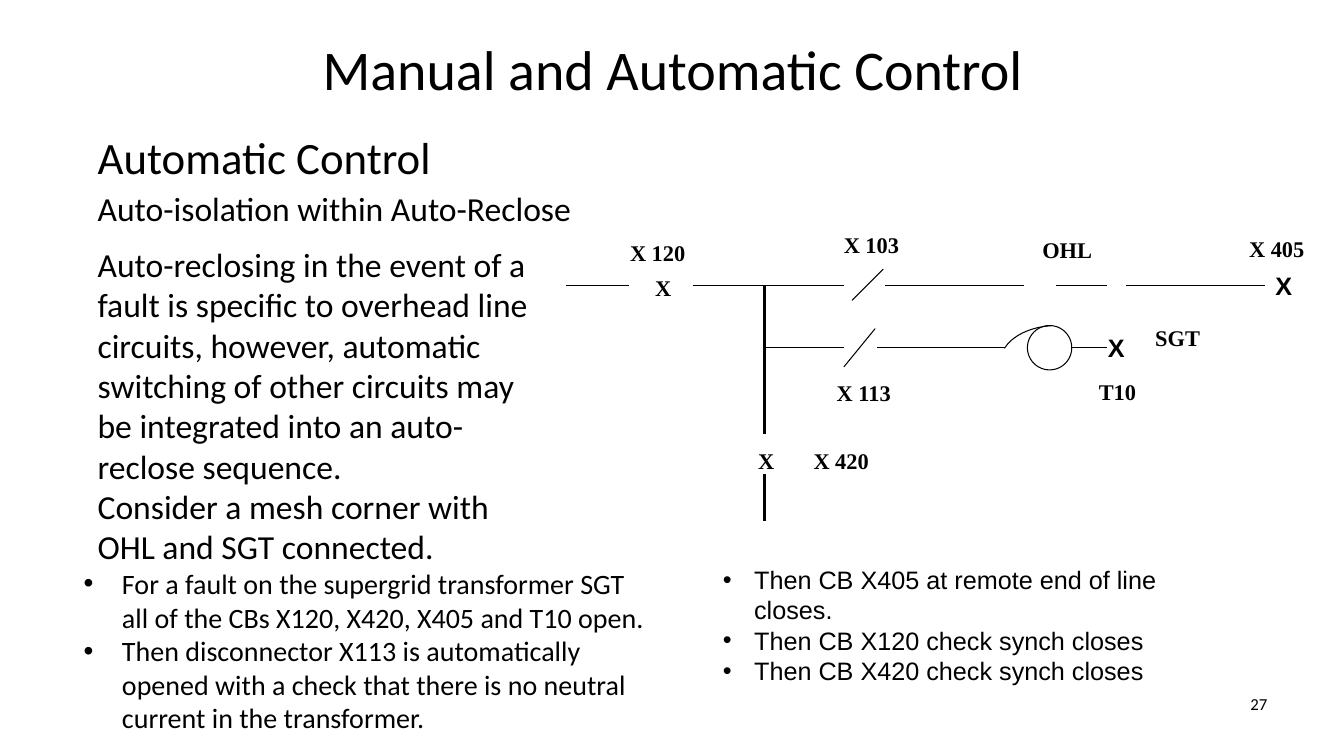
import dataclasses

import pptx
import pptx.dml.color
import pptx.enum.shapes
import pptx.enum.text
import pptx.oxml
import pptx.oxml.ns
import pptx.util
from pptx.util import Inches, Pt


@dataclasses.dataclass(frozen=True)
class Theme:
    ink: pptx.dml.color.RGBColor = pptx.dml.color.RGBColor(0, 0, 0)
    body_font: str = "Calibri"
    label_font: str = "Times New Roman"
    plain_font: str = "Arial"
    title: int = 40
    heading: int = 32
    text: int = 24
    step: int = 20
    remote_step: int = 18
    breaker: int = 18
    label: int = 16
    page: int = 12
    hairline: float = 0
    fine: float = 0.5
    wire: float = 0.75


THEME = Theme()
ALIGN = pptx.enum.text.PP_ALIGN


def place(shape, box):
    shape.left, shape.top, shape.width, shape.height = map(Inches, box)


def write(shape, lines, size, font, bold=False, align=ALIGN.LEFT, hang=None):
    """Fill a shape with paragraphs, bulleted when hang is given."""
    frame = shape.text_frame
    frame.text = "\n".join(lines)
    frame.word_wrap = True
    frame.auto_size = pptx.enum.text.MSO_AUTO_SIZE.NONE
    for paragraph in frame.paragraphs:
        if hang:
            properties = paragraph._p.get_or_add_pPr()
            properties.set("marL", str(Inches(hang)))
            properties.set("indent", str(-Inches(hang)))
            bullet = pptx.oxml.parse_xml(
                f'<a:buChar {pptx.oxml.ns.nsdecls("a")} char="•"/>')
            properties.append(bullet)
        paragraph.alignment = align
        paragraph.space_before = Pt(0)
        for run in paragraph.runs:
            run.font.size = Pt(size)
            run.font.name = font
            run.font.bold = bold
            run.font.color.rgb = THEME.ink
    return frame


def add_text(slide, box, lines, size, font, **options):
    return write(slide.shapes.add_textbox(*map(Inches, box)), lines, size, font, **options)


def add_wire(slide, start, end, width):
    wire = slide.shapes.add_connector(
        pptx.enum.shapes.MSO_CONNECTOR.STRAIGHT, *map(Inches, start + end))
    wire.line.color.rgb = THEME.ink
    wire.line.width = Pt(width)
    wire._element.spPr.append(
        pptx.oxml.parse_xml(f'<a:effectLst {pptx.oxml.ns.nsdecls("a")}/>'))


def add_outline(slide, kind, box):
    outline = slide.shapes.add_shape(kind, *map(Inches, box))
    outline.shadow.inherit = False
    outline.fill.background()
    outline.line.color.rgb = THEME.ink
    outline.line.width = Pt(THEME.wire)
    return outline


def add_title(slide, box):
    place(slide.shapes.title, box)
    frame = write(slide.shapes.title, ["Manual and Automatic Control"],
                  THEME.title, THEME.body_font, align=ALIGN.CENTER)
    frame.vertical_anchor = pptx.enum.text.MSO_ANCHOR.MIDDLE


def add_introduction(slide, box):
    left, top, width, height = box
    heading = add_text(slide, (left, top, width, 1.12),
                       ["Automatic Control", "Auto-isolation within Auto-Reclose"],
                       THEME.heading, THEME.body_font)
    subheading = heading.paragraphs[1]
    subheading.space_before = Pt(3)
    subheading.runs[0].font.size = Pt(THEME.text)
    add_text(slide, (left, top + 1.13, 4.67, height - 1.13),
             ["Auto-reclosing in the event of a fault is specific to overhead line circuits, "
              "however, automatic switching of other circuits may be integrated into an "
              "auto-reclose sequence.",
              "Consider a mesh corner with OHL and SGT connected."],
             THEME.text, THEME.body_font)


def add_mesh_corner(slide, box):
    """Single-line diagram; offsets run from the left end of the busbar."""
    left, busbar = box[:2]
    branch = busbar + 0.62
    corner = left + 1.97

    # Horizontal wires: row, offsets of both ends, width
    for row, start, end, width in [
        (busbar, 0, 0.63, THEME.wire),
        (busbar, 1.26, 2.76, THEME.wire),
        (busbar, 3.17, 4.55, THEME.wire),
        (busbar, 4.86, 5.37, THEME.wire),
        (busbar, 5.56, 6.94, THEME.wire),
        (branch, 1.97, 2.76, THEME.wire),
        (branch, 3.09, 4.36, THEME.fine),
        (branch, 5.02, 5.37, THEME.wire),
    ]:
        add_wire(slide, (left + start, row), (left + end, row), width)

    # Vertical wires down from the corner
    for start, end in [(0, 0.62), (0.62, 1.48), (1.87, 2.34)]:
        add_wire(slide, (corner, busbar + start), (corner, busbar + end), THEME.hairline)

    # Open disconnectors X 103 and X 113
    add_wire(slide, (left + 2.84, busbar + 0.15), (left + 3.15, busbar - 0.16), THEME.wire)
    add_wire(slide, (left + 2.76, branch + 0.19), (left + 3.07, branch - 0.19), THEME.wire)

    # Transformer winding and its lead
    shapes = pptx.enum.shapes.MSO_SHAPE
    add_outline(slide, shapes.OVAL, (left + 4.58, branch - 0.22, 0.44, 0.44))
    lead = add_outline(slide, shapes.ARC, (left + 4.31, branch - 0.22, 1.12, 0.73))
    for index, degrees in enumerate((195, 262)):
        lead.adjustments[index] = degrees * 0.6

    # Names of the plant and the breakers on the mesh
    for name, x, y, width in [
        ("X 120", 0.54, -0.51, 0.81),
        ("X", 0.79, -0.16, 0.26),
        ("X 103", 2.66, -0.59, 0.81),
        ("OHL", 4.63, -0.54, 0.79),
        ("X 405", 6.68, -0.55, 0.81),
        ("SGT", 5.75, 0.34, 1.1),
        ("X 113", 2.59, 0.88, 0.81),
        ("T10", 5.19, 0.87, 0.81),
        ("X", 1.81, 1.56, 0.26),
        ("X 420", 2.36, 1.56, 0.81),
    ]:
        add_text(slide, (left + x, busbar + y, width, 0.37), [name],
                 THEME.label, THEME.label_font, bold=True)

    # Breakers X 405 and T10
    for x, row in [(6.94, busbar), (5.28, branch)]:
        add_text(slide, (left + x, row - 0.2, 0.79, 0.4), ["X"],
                 THEME.breaker, THEME.plain_font, bold=True)


def add_sequence(slide, box):
    left, top, width, height = box
    local, remote = list(slide.placeholders)[1:3]
    place(local, (left, top + 0.02, 5.79, height - 0.02))
    write(local,
          ["For a fault on the supergrid transformer SGT all of the CBs X120, X420, X405 "
           "and T10 open.",
           "Then disconnector X113 is automatically opened with a check that there is no "
           "neutral current in the transformer."],
          THEME.step, THEME.body_font, hang=0.38)
    place(remote, (left + width - 5.07, top, 5.07, 1.31))
    write(remote,
          ["Then CB X405 at remote end of line closes.",
           "Then CB X120 check synch closes",
           "Then CB X420 check synch closes"],
          THEME.remote_step, THEME.plain_font, hang=0.31)


def add_page_number(slide, box):
    frame = add_text(slide, box, ["27"], THEME.page, THEME.body_font, align=ALIGN.RIGHT)
    frame.vertical_anchor = pptx.enum.text.MSO_ANCHOR.TOP


def main():
    deck = pptx.Presentation()
    deck.slide_width, deck.slide_height = Inches(13.33), Inches(7.5)
    slide = deck.slides.add_slide(deck.slide_layouts.get_by_name("Two Content"))
    add_title(slide, (0.67, 0.12, 12, 1.12))
    add_introduction(slide, (0.87, 1.24, 11.37, 4.46))
    add_mesh_corner(slide, (5.61, 2.83, 7.49, 2.34))
    add_sequence(slide, (0.73, 5.55, 11.41, 1.8))
    add_page_number(slide, (9.56, 6.83, 3.11, 0.52))
    deck.save("out.pptx")


if __name__ == "__main__":
    main()
